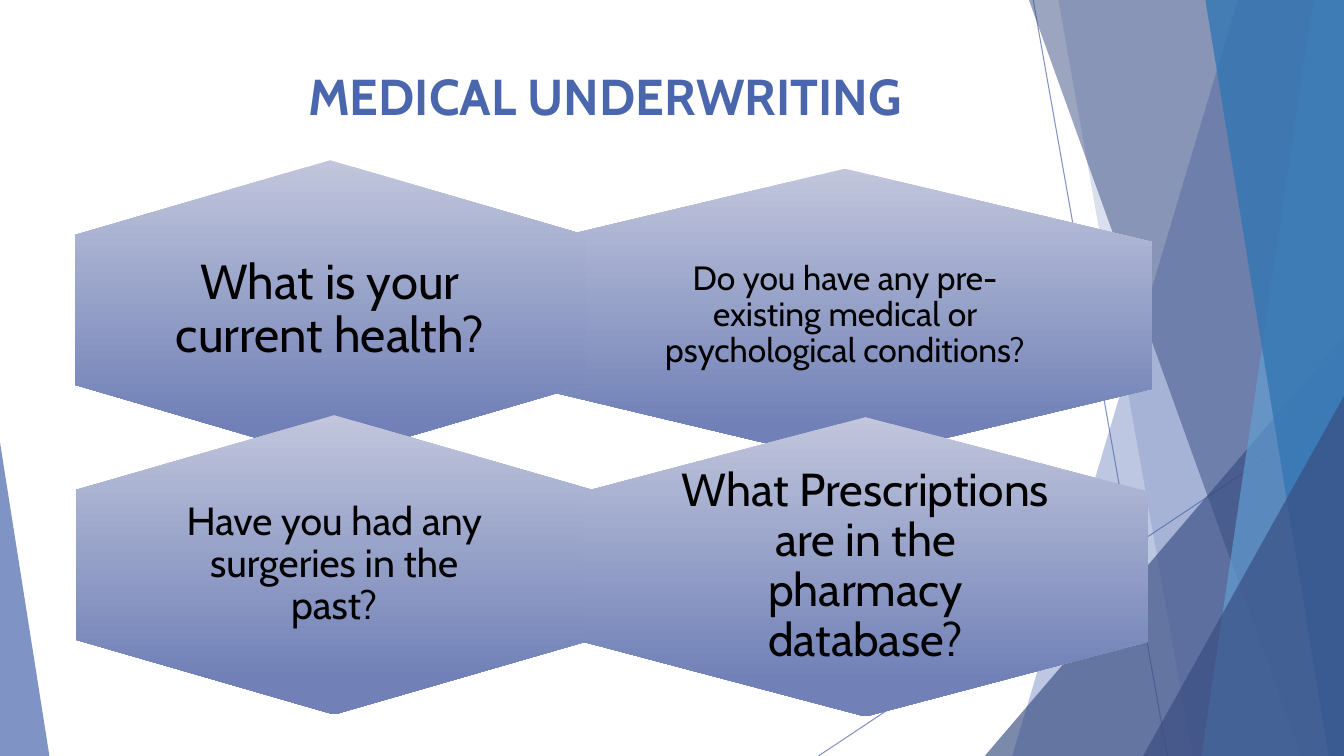
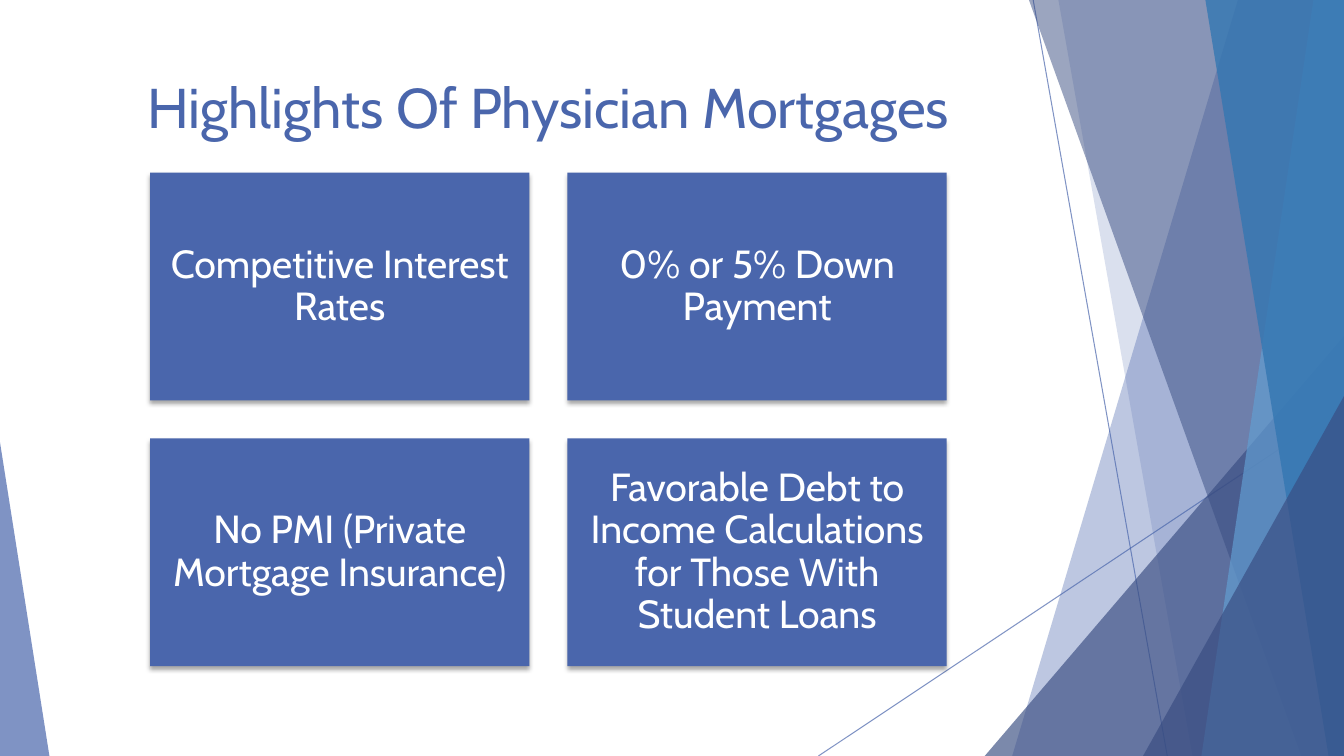
import pptx
import pptx.dml.color
import pptx.enum.shapes
import pptx.enum.text
import pptx.oxml.ns
import pptx.util
from lxml import etree

Pt = pptx.util.Pt
SHAPE = pptx.enum.shapes.MSO_SHAPE
ANCHOR = pptx.enum.text.MSO_ANCHOR
qn = pptx.oxml.ns.qn

WIDTH, HEIGHT = 960, 540
FONT = "Cabin"
BLUE, NAVY, SKY, OCEAN = "4A66AC", "384C81", "629DD1", "3477B2"
HEX_TOP, HEX_BOTTOM = "C1C6DC", "7181B7"
BLACK, WHITE = "000000", "FFFFFF"


def rgb(value):
    return pptx.dml.color.RGBColor.from_string(value)


def set_alpha(properties, percent):
    """Make the first plain colour found in the properties see-through."""
    color = properties.find(".//" + qn("a:srgbClr"))
    etree.SubElement(color, qn("a:alpha"), val=str(percent * 1000))


def paint(shape, color, alpha=100):
    shape.shadow.inherit = False
    shape.fill.solid()
    shape.fill.fore_color.rgb = rgb(color)
    shape.line.fill.background()
    if alpha < 100:
        set_alpha(shape._element.spPr, alpha)


def write(shape, text, size, color, bold=False, spacing=0.9, inset=0,
          anchor=ANCHOR.MIDDLE):
    frame = shape.text_frame
    frame.word_wrap = True
    frame.vertical_anchor = anchor
    frame.margin_left = frame.margin_right = Pt(inset)
    frame.margin_top = frame.margin_bottom = Pt(inset)
    para = frame.paragraphs[0]
    para.alignment = pptx.enum.text.PP_ALIGN.CENTER
    para.line_spacing = spacing
    span = para.add_run()
    span.text = text
    span.font.name = FONT
    span.font.size = Pt(size)
    span.font.bold = bold
    span.font.color.rgb = rgb(color)


def add_ray(page, start, end):
    ray = page.shapes.add_connector(
        pptx.enum.shapes.MSO_CONNECTOR.STRAIGHT, *map(Pt, start + end))
    ray.line.color.rgb = rgb(BLUE)
    ray.line.width = Pt(0.75)
    properties = ray._element.spPr
    set_alpha(properties, 70)
    etree.SubElement(properties, qn("a:effectLst"))


def add_band(page, top_x, bottom_x, color, alpha):
    """Fill from a slanted left edge to the right edge of the slide."""
    outline = page.shapes.build_freeform(Pt(top_x), 0)
    outline.add_line_segments([(Pt(WIDTH), 0), (Pt(WIDTH), Pt(HEIGHT)),
                               (Pt(bottom_x), Pt(HEIGHT))])
    paint(outline.convert_to_shape(), color, alpha)


def add_corner(page, left, top, width, peak, color, alpha):
    """Stand a triangle on the bottom edge, its peak at a share of its width."""
    corner = page.shapes.add_shape(SHAPE.ISOSCELES_TRIANGLE, Pt(left), Pt(top),
                                   Pt(width), Pt(HEIGHT - top))
    corner.adjustments[0] = peak
    paint(corner, color, alpha)


def add_backdrop(page):
    add_ray(page, (738, 0), (833.8, HEIGHT))
    add_ray(page, (WIDTH, 290), (584.6, HEIGHT))
    add_band(page, 884.2, 723, BLUE, 36)
    add_band(page, 756, 851.8, BLUE, 20)
    add_corner(page, 703.4, 240, WIDTH - 703.4, 1, NAVY, 66)
    add_band(page, 735, 929.5, NAVY, 50)
    add_band(page, 938.2, 858.2, SKY, 70)
    add_band(page, 861, 949, OCEAN, 80)
    add_corner(page, 816.5, 283, WIDTH - 816.5, 1, NAVY, 66)
    add_corner(page, 0, 316, 35.3, 0, BLUE, 70)


def add_title(page, box, text, size, bold=False):
    title = page.shapes.add_textbox(*map(Pt, box))
    write(title, text, size, BLUE, bold=bold, spacing=1, inset=3.6,
          anchor=ANCHOR.TOP)


def add_hexagon(page, box, text, size, inset):
    """Fill the box with an upright hexagon; text takes its middle two thirds."""
    left, top, width, height = box
    middle_x, middle_y = left + width / 2, top + height / 2
    hexagon = page.shapes.add_shape(
        SHAPE.HEXAGON, Pt(middle_x - height / 2), Pt(middle_y - width / 2),
        Pt(height), Pt(width))
    hexagon.rotation = 90
    hexagon.shadow.inherit = False
    hexagon.line.fill.background()
    hexagon.fill.gradient()
    hexagon.fill.gradient_angle = 270
    stops = ((0, HEX_TOP), (0.88, HEX_BOTTOM))
    for stop, (position, color) in zip(hexagon.fill.gradient_stops, stops):
        stop.position = position
        stop.color.rgb = rgb(color)
    hexagon._element.spPr.find(qn("a:gradFill")).set("rotWithShape", "0")

    label = page.shapes.add_textbox(
        Pt(middle_x - width / 3), Pt(middle_y - height / 3),
        Pt(width * 2 / 3), Pt(height * 2 / 3))
    write(label, text, size, BLACK, inset=inset)


def add_card(page, box, text):
    card = page.shapes.add_shape(SHAPE.RECTANGLE, *map(Pt, box))
    paint(card, BLUE)
    effects = card._element.spPr.find(qn("a:effectLst"))
    shadow = etree.SubElement(
        effects, qn("a:outerShdw"), blurRad=str(Pt(3)), dist=str(Pt(2)),
        dir="5400000", rotWithShape="0")
    etree.SubElement(shadow, qn("a:srgbClr"), val=BLACK)
    set_alpha(shadow, 35)
    write(card, text, 28, WHITE, inset=8.4)


def add_card_grid(page, box, gap, texts, columns=2):
    left, top, width, height = box
    rows = len(texts) // columns
    card_width = (width - gap * (columns - 1)) / columns
    card_height = (height - gap * (rows - 1)) / rows
    for index, text in enumerate(texts):
        row, column = divmod(index, columns)
        add_card(page, (left + column * (card_width + gap),
                        top + row * (card_height + gap),
                        card_width, card_height), text)


def add_page(deck):
    page = deck.slides.add_slide(deck.slide_layouts[6])
    add_backdrop(page)
    return page


def build_underwriting(deck):
    page = add_page(deck)
    add_title(page, (77.8, 43.2, 708.5, 57.6), "MEDICAL UNDERWRITING", 36,
              bold=True)
    questions = (
        ((384, 120.5, 439.2, 209.5),
         "Do you have any pre-existing medical or psychological conditions?",
         24, 7.2),
        ((53.3, 114.5, 365, 213.8), "What is your current health?", 35, 0),
        ((54, 296.6, 369.4, 213.8),
         "Have you had any surgeries in the past?", 28, 8.4),
        ((416.2, 298, 404, 213.8),
         "What Prescriptions are in the pharmacy database?", 33, 0),
    )
    for box, text, size, inset in questions:
        add_hexagon(page, box, text, size, inset)


def build_highlights(deck):
    page = add_page(deck)
    add_title(page, (53.3, 48.2, 676.8, 67.7),
              "Highlights Of Physician Mortgages", 40)
    add_card_grid(page, (107.2, 123.3, 569, 352.6), 27.2, (
        "Competitive Interest Rates",
        "0% or 5% Down Payment",
        "No PMI (Private Mortgage Insurance)",
        "Favorable Debt to Income Calculations for Those With Student Loans",
    ))


def main():
    deck = pptx.Presentation()
    deck.slide_width, deck.slide_height = Pt(WIDTH), Pt(HEIGHT)
    build_underwriting(deck)
    build_highlights(deck)
    deck.save("out.pptx")


if __name__ == "__main__":
    main()
